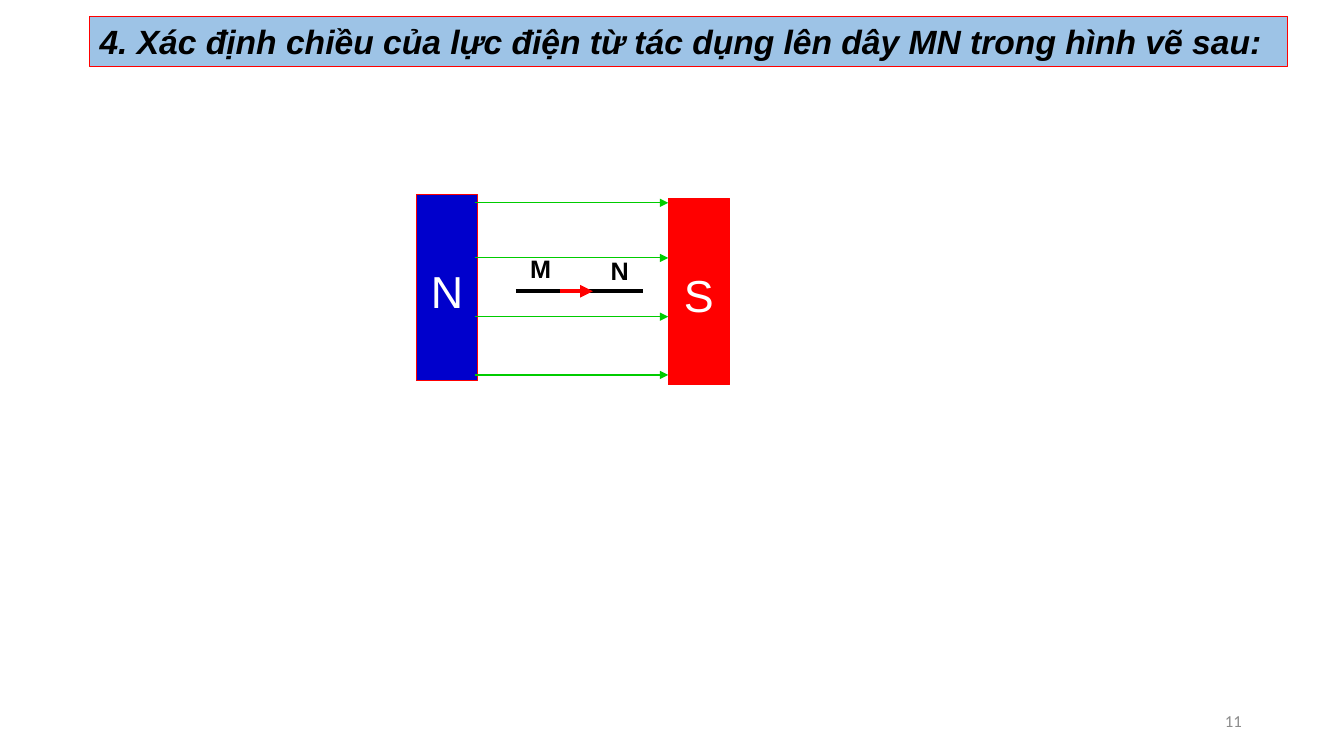
from lxml import etree
from pptx import Presentation
from pptx.dml.color import RGBColor
from pptx.enum.shapes import MSO_CONNECTOR, MSO_SHAPE
from pptx.enum.text import MSO_ANCHOR, PP_ALIGN
from pptx.oxml.ns import qn
from pptx.util import Cm, Pt

RECTANGLE = MSO_SHAPE.RECTANGLE
STRAIGHT = MSO_CONNECTOR.STRAIGHT
TOP, MIDDLE = MSO_ANCHOR.TOP, MSO_ANCHOR.MIDDLE
LEFT, CENTER, RIGHT = PP_ALIGN.LEFT, PP_ALIGN.CENTER, PP_ALIGN.RIGHT

COLORS = {
    "black": "000000", "white": "FFFFFF", "gray": "8C8C8C", "red": "FF0000",
    "blue": "0000CC", "green": "00CC00", "banner": "9DC3E6",
}


def rgb(name):
    return RGBColor.from_string(COLORS[name])


class SlideBuilder:
    def __init__(self, slide, font="Arial"):
        self.shapes = slide.shapes
        self.font = font

    def set_text(self, shape, text, size, color, align=LEFT, anchor=TOP,
                 bold=False, italic=False, font=None, wrap=True):
        frame = shape.text_frame
        frame.word_wrap = wrap
        frame.vertical_anchor = anchor
        paragraph = frame.paragraphs[0]
        paragraph.text = text
        paragraph.alignment = align
        style = paragraph.font
        style.name = font or self.font
        style.size = Pt(size)
        style.bold = bold
        style.italic = italic
        style.color.rgb = rgb(color)

    def label(self, box, text, size, color, **style):
        self.set_text(self.shapes.add_textbox(*map(Cm, box)), text, size, color, **style)

    def block(self, box, fill, text, size, color, **style):
        shape = self.shapes.add_shape(RECTANGLE, *map(Cm, box))
        shape.shadow.inherit = False
        shape.fill.solid()
        shape.fill.fore_color.rgb = rgb(fill)
        shape.line.color.rgb = rgb("red")
        shape.line.width = Pt(0.75)
        self.set_text(shape, text, size, color, **style)
        return shape

    def horizontal_line(self, start, end, y, color, width, arrow=True):
        line = self.shapes.add_connector(STRAIGHT, Cm(start), Cm(y), Cm(end), Cm(y))
        line.line.color.rgb = rgb(color)
        line.line.width = Pt(width)
        properties = line._element.spPr
        if arrow:
            etree.SubElement(properties.find(qn("a:ln")), qn("a:tailEnd"), type="triangle")
        etree.SubElement(properties, qn("a:effectLst"))


def main():
    prs = Presentation()
    prs.slide_width, prs.slide_height = Cm(33.87), Cm(19.05)
    builder = SlideBuilder(prs.slides.add_slide(prs.slide_layouts[6]))

    # Page number
    builder.label((23.93, 17.65, 7.62, 1.02), "11", 12, "gray",
                  align=RIGHT, anchor=MIDDLE, font="Calibri")

    # Wire MN with its current
    for end_name, left, top, width in (("M", 13.11, 6.27, 1.12), ("N", 15.14, 6.32, 0.97)):
        builder.label((left, top, width, 1.02), end_name, 18, "black", bold=True, wrap=False)
    wire_y = 7.34
    builder.horizontal_line(13, 16.21, wire_y, "black", 3, arrow=False)
    builder.horizontal_line(14.1, 14.94, wire_y, "red", 3)

    # Magnet poles
    south_left = 16.84
    for pole, left, top, fill in (("N", 10.49, 4.9, "blue"), ("S", south_left, 5, "red")):
        magnet = builder.block((left, top, 1.55, 4.7), fill, pole, 32, "white",
                               align=CENTER, anchor=MIDDLE)
        magnet.text_frame.margin_top = Cm(0.28)

    # Field lines from north to south
    for field_y in (5.11, 6.5, 7.98, 9.45):
        builder.horizontal_line(11.96, south_left, field_y, "green", 0.75)

    # Question
    builder.block((2.26, 0.41, 30.2, 1.27), "banner",
                  "4. Xác định chiều của lực điện từ tác dụng lên dây MN trong hình vẽ sau:",
                  24, "black", bold=True, italic=True)

    prs.save("out.pptx")


if __name__ == "__main__":
    main()
